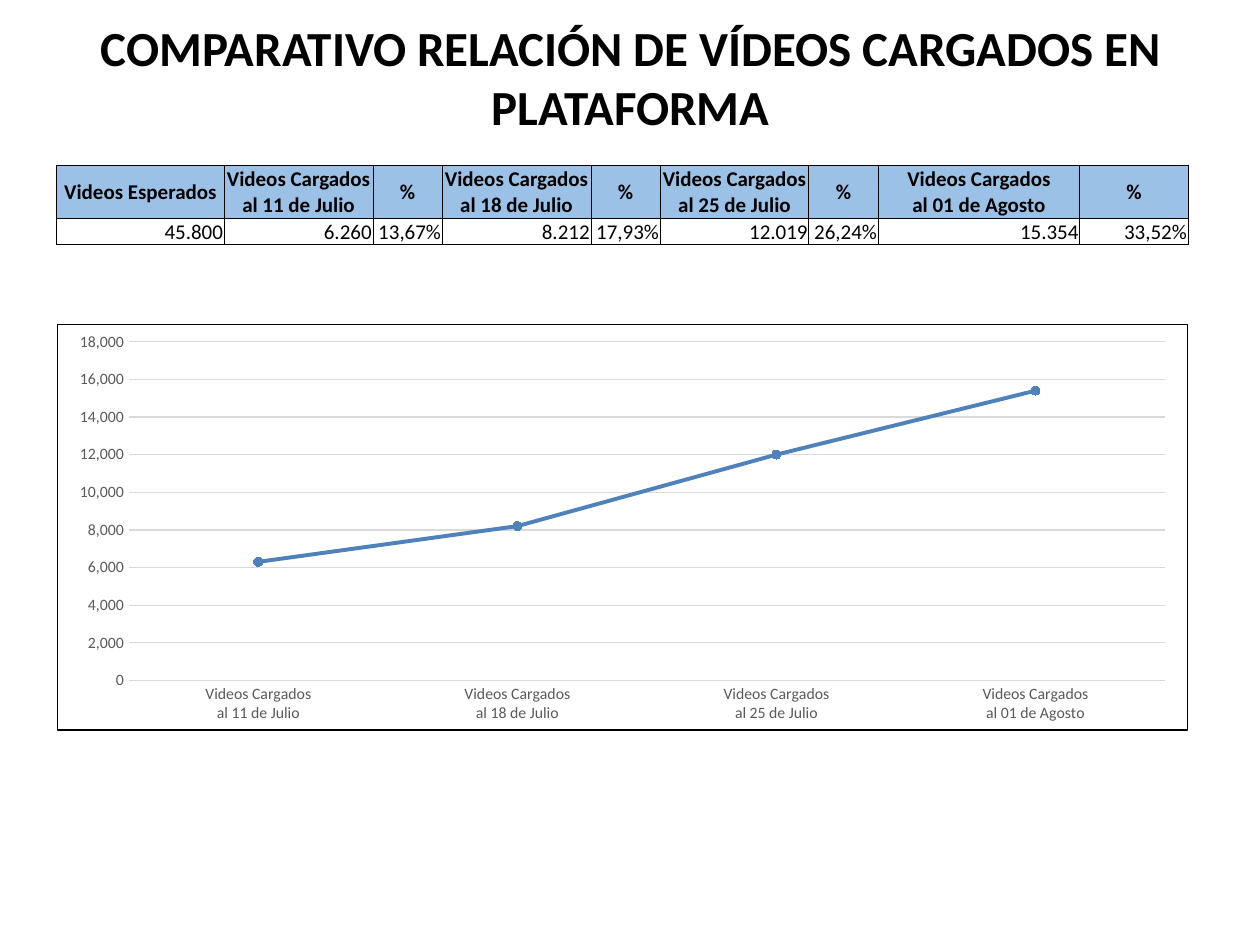
import pptx
import pptx.chart.data
import pptx.dml.color
import pptx.enum.chart
import pptx.enum.shapes
import pptx.enum.text
import pptx.oxml
import pptx.oxml.ns
import pptx.util
from dataclasses import dataclass

Inches = pptx.util.Inches
Pt = pptx.util.Pt
ALIGN = pptx.enum.text.PP_ALIGN
ANCHOR = pptx.enum.text.MSO_ANCHOR
NS = pptx.oxml.ns.nsdecls


def rgb(value):
    return pptx.dml.color.RGBColor.from_string(value)


@dataclass(frozen=True)
class Theme:
    font: str = "Calibri"
    ink: str = "000000"
    paper: str = "FFFFFF"
    header: str = "9BC2E6"
    series: str = "4F81BD"
    axis_text: str = "595959"
    grid: str = "D9D9D9"
    title_size: float = 28
    table_size: float = 12
    chart_size: float = 10
    axis_size: float = 9
    cell_border: float = 0.5
    thin_line: float = 0.75
    series_line: float = 2.25
    marker_size: int = 5


class SlideBuilder:
    def __init__(self, slide, theme):
        self.slide = slide
        self.theme = theme

    def style_font(self, font, size, color, bold=False):
        font.name = self.theme.font
        font.size = Pt(size)
        font.bold = bold
        font.color.rgb = rgb(color)

    def title(self, text, left, top, width, height):
        theme = self.theme
        banner = self.slide.shapes.add_shape(
            pptx.enum.shapes.MSO_SHAPE.ROUND_2_DIAG_RECTANGLE,
            Inches(left), Inches(top), Inches(width), Inches(height))
        banner.shadow.inherit = False
        banner.fill.solid()
        banner.fill.fore_color.rgb = rgb(theme.paper)
        banner.line.fill.background()
        frame = banner.text_frame
        frame.word_wrap = True
        frame.vertical_anchor = ANCHOR.MIDDLE
        heading = frame.paragraphs[0]
        heading.text = text
        heading.alignment = ALIGN.CENTER
        self.style_font(heading.font, theme.title_size, theme.ink, True)

    def cell(self, cell, text, is_header):
        theme = self.theme
        cell.margin_left = cell.margin_right = cell.margin_top = Inches(0.01)
        cell.margin_bottom = 0
        centred = is_header and "\n" not in text
        cell.vertical_anchor = ANCHOR.MIDDLE if centred else ANCHOR.BOTTOM
        entry = cell.text_frame.paragraphs[0]
        entry.text = text
        entry.alignment = ALIGN.CENTER if is_header else ALIGN.RIGHT
        self.style_font(entry.font, theme.table_size, theme.ink, is_header)
        properties = cell._tc.get_or_add_tcPr()
        for side in ("lnL", "lnR", "lnT", "lnB"):
            properties.append(pptx.oxml.parse_xml(
                f'<a:{side} {NS("a")} w="{Pt(theme.cell_border)}"><a:solidFill>'
                f'<a:srgbClr val="{theme.ink}"/></a:solidFill></a:{side}>'))
        if is_header:
            cell.fill.solid()
            cell.fill.fore_color.rgb = rgb(theme.header)
        else:
            cell.fill.background()

    def table(self, rows, left, top, widths, heights):
        table = self.slide.shapes.add_table(
            len(rows), len(widths), Inches(left), Inches(top),
            Inches(sum(widths)), Inches(sum(heights))).table
        table.first_row = table.horz_banding = False
        for column, width in zip(table.columns, widths):
            column.width = Inches(width)
        for index, (texts, height) in enumerate(zip(rows, heights)):
            table.rows[index].height = Inches(height)
            for column, text in enumerate(texts):
                self.cell(table.cell(index, column), text, index == 0)

    def axis(self, axis):
        axis.major_tick_mark = pptx.enum.chart.XL_TICK_MARK.NONE
        axis.minor_tick_mark = pptx.enum.chart.XL_TICK_MARK.NONE
        self.style_font(axis.tick_labels.font, self.theme.axis_size, self.theme.axis_text)

    def grey_line(self, line):
        line.color.rgb = rgb(self.theme.grid)
        line.width = Pt(self.theme.thin_line)

    def line_chart(self, categories, values, left, top, width, height):
        theme = self.theme
        data = pptx.chart.data.CategoryChartData(number_format="#,##0")
        data.categories = categories
        data.add_series("Series 1", values)
        chart = self.slide.shapes.add_chart(
            pptx.enum.chart.XL_CHART_TYPE.LINE_MARKERS,
            Inches(left), Inches(top), Inches(width), Inches(height), data).chart
        chart.has_title = False
        chart.has_legend = False
        self.style_font(chart.font, theme.chart_size, theme.ink)
        chart.plots[0].vary_by_categories = False

        self.axis(chart.category_axis)
        self.grey_line(chart.category_axis.format.line)
        value_axis = chart.value_axis
        self.axis(value_axis)
        value_axis.minimum_scale = 0
        value_axis.maximum_scale = 18000
        value_axis.major_unit = 2000
        value_axis.tick_labels.number_format = "#,##0"
        value_axis.tick_labels.number_format_is_linked = False
        value_axis.format.line.fill.background()
        value_axis.has_major_gridlines = True
        self.grey_line(value_axis.major_gridlines.format.line)

        uploads = chart.plots[0].series[0]
        uploads.smooth = False
        uploads.format.line.color.rgb = rgb(theme.series)
        uploads.format.line.width = Pt(theme.series_line)
        marker = uploads.marker
        marker.style = pptx.enum.chart.XL_MARKER_STYLE.CIRCLE
        marker.size = theme.marker_size
        marker.format.fill.solid()
        marker.format.fill.fore_color.rgb = rgb(theme.series)
        marker.format.line.color.rgb = rgb(theme.series)

        chart.element.find(pptx.oxml.ns.qn("c:chart")).addnext(pptx.oxml.parse_xml(
            f'<c:spPr {NS("c", "a")}><a:noFill/><a:ln w="{Pt(theme.thin_line)}">'
            f'<a:solidFill><a:srgbClr val="{theme.ink}"/></a:solidFill></a:ln></c:spPr>'))


def main():
    presentation = pptx.Presentation()
    presentation.slide_width = Inches(10)
    presentation.slide_height = Inches(7.5)
    slide = presentation.slides.add_slide(presentation.slide_layouts[6])
    builder = SlideBuilder(slide, Theme())

    progress = [
        ("11 de Julio", "6.260", "13,67%", 6300),
        ("18 de Julio", "8.212", "17,93%", 8200),
        ("25 de Julio", "12.019", "26,24%", 12000),
        ("01 de Agosto", "15.354", "33,52%", 15400),
    ]
    categories = [f"Videos Cargados\nal {date}" for date, *_ in progress]
    headers, totals = ["Videos Esperados"], ["45.800"]
    for category, (_, uploaded, share, _) in zip(categories, progress):
        headers += [category, "%"]
        totals += [uploaded, share]

    left = 0.45
    widths = [1.33] + [1.18, 0.55] * 3 + [1.6, 0.86]
    builder.title("COMPARATIVO RELACIÓN DE VÍDEOS CARGADOS EN PLATAFORMA",
                  0.01, 0.21, 9.99, 0.79)
    builder.table([headers, totals], left, 1.31, widths, [0.42, 0.21])
    builder.line_chart(categories, [plotted for *_, plotted in progress],
                       left, 2.57, sum(widths), 3.23)
    presentation.save("out.pptx")


if __name__ == "__main__":
    main()
